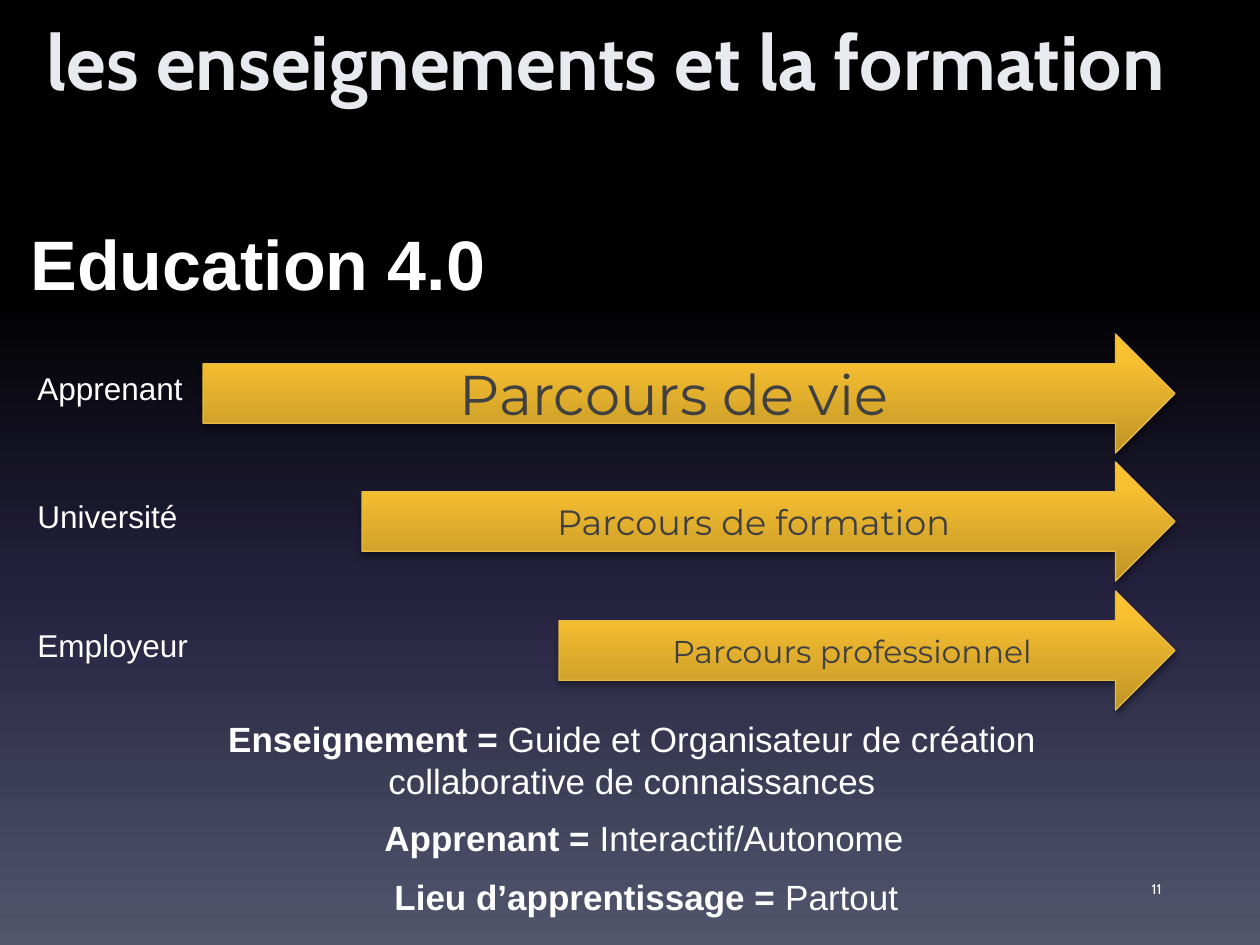
from dataclasses import dataclass
from lxml import etree
from pptx import Presentation, util as u
from pptx.dml.color import RGBColor
from pptx.enum import shapes, text
from pptx.oxml.ns import qn


@dataclass(frozen=True)
class Theme:
    body: str = "Arial"
    head: str = "Cabin"
    arrow: str = "Montserrat"
    white: str = "FFFFFF"
    title: str = "E9EAF0"
    dark: str = "404040"
    edge: str = "E7BA45"
    shade: str = "000000"
    gold: tuple = ((0, "BF9426"), (80, "F8C031"), (100, "FDC32D"))
    night: tuple = ((0, "000000"), (31, "000000"), (62, "24213E"), (100, "51566D"))
    huge: int = 44
    big: int = 40
    note: int = 20
    label: int = 18
    tiny: int = 8


def px(n):
    return u.Inches(n / 126)


def add(parent, tag, **attrs):
    return etree.SubElement(parent, qn(tag), {k: str(v) for k, v in attrs.items()})


class Deck:
    def __init__(self, theme):
        self.theme = theme
        self.file = Presentation()
        self.file.slide_width, self.file.slide_height = px(1260), px(945)
        self.slide = self.file.slides.add_slide(self.file.slide_layouts[5])
        self.blend(self.slide.background.fill, theme.night, 270)

    def blend(self, fill, stops, angle):
        fill.gradient()
        fill.gradient_angle = angle
        group = fill.gradient_stops[0]._gs.getparent()
        for stop in list(group):
            group.remove(stop)
        for place, color in stops:
            add(add(group, "a:gs", pos=place * 1000), "a:srgbClr", val=color)

    def style(self, para, size, color, face, bold=False, align=None):
        para.alignment = align
        font = para.font
        font.size, font.name, font.bold = u.Pt(size), face, bold
        font.color.rgb = RGBColor.from_string(color)

    def place(self, shape, box):
        shape.left, shape.top, shape.width, shape.height = map(px, box)

    def title(self, words):
        shape = self.slide.shapes.title
        self.place(shape, (0, 26, 1230, 80))
        frame = shape.text_frame
        frame.text = words
        frame.auto_size = text.MSO_AUTO_SIZE.NONE
        frame.vertical_anchor = text.MSO_ANCHOR.BOTTOM
        frame.margin_left = frame.margin_right = frame.margin_bottom = 0
        frame.margin_top = u.Inches(0.05)
        self.style(frame.paragraphs[0], self.theme.huge, self.theme.title,
                   self.theme.head, True, text.PP_ALIGN.CENTER)

    def label(self, box, words, size, face=None, bold=False, align=None,
              wrap=False, lead=None, anchor=text.MSO_ANCHOR.TOP):
        frame = self.slide.shapes.add_textbox(*map(px, box)).text_frame
        frame.word_wrap = wrap
        frame.vertical_anchor = anchor
        frame.text = words
        for para in frame.paragraphs:
            self.style(para, size, self.theme.white, face or self.theme.body, bold, align)
        if lead:
            para = frame.paragraphs[0]
            rest = para.runs[0].text
            para.runs[0].text = lead
            para.runs[0].font.bold = True
            para.add_run().text = rest

    def arrow(self, box, words, size):
        shape = self.slide.shapes.add_shape(shapes.MSO_SHAPE.RIGHT_ARROW, *map(px, box))
        self.blend(shape.fill, self.theme.gold, 90)
        shape.line.color.rgb = RGBColor.from_string(self.theme.edge)
        shape.line.width = u.Pt(0.75)
        shape.shadow.inherit = False
        glow = shape._element.spPr.find(qn("a:effectLst"))
        cast = add(glow, "a:outerShdw", blurRad=u.Pt(3.1), dist=u.Pt(1.8),
                   dir=5400000, rotWithShape=0)
        add(add(cast, "a:srgbClr", val=self.theme.shade), "a:alpha", val=35000)
        frame = shape.text_frame
        frame.text = words
        frame.vertical_anchor = text.MSO_ANCHOR.MIDDLE
        self.style(frame.paragraphs[0], size, self.theme.dark, self.theme.arrow,
                   align=text.PP_ALIGN.CENTER)


def main():
    theme = Theme()
    deck = Deck(theme)
    mid = text.PP_ALIGN.CENTER
    deck.title("les enseignements et la formation ")
    deck.label((15, 214, 486, 97), "Education 4.0", theme.big, bold=True, align=mid, wrap=True)

    rows = (
        ("Apprenant", 174, "Parcours de vie", 203, 32),
        ("Université", 166, "Parcours de formation", 362, 20),
        ("Employeur", 178, "Parcours professionnel", 559, 18),
    )
    for i, (name, wide, path, left, size) in enumerate(rows):
        top = 334 + i * 257 // 2
        deck.label((25, top + 29, wide, 50), name, theme.label)
        deck.arrow((left, top, 1175 - left, 119), path, size)

    notes = (
        ((213, 711, 848, 97), "Enseignement = ",
         "Guide et Organisateur de création \ncollaborative de connaissances ", mid),
        ((372, 810, 549, 55), "Apprenant = ", "Interactif/Autonome", None),
        ((382, 869, 533, 55), "Lieu d’apprentissage = ", "Partout", None),
    )
    for box, lead, words, align in notes:
        deck.label(box, words, theme.note, align=align, lead=lead)

    deck.label((931, 864, 243, 50), "11", theme.tiny, theme.head, wrap=True,
               align=text.PP_ALIGN.RIGHT, anchor=text.MSO_ANCHOR.MIDDLE)
    deck.file.save("out.pptx")


if __name__ == "__main__":
    main()
